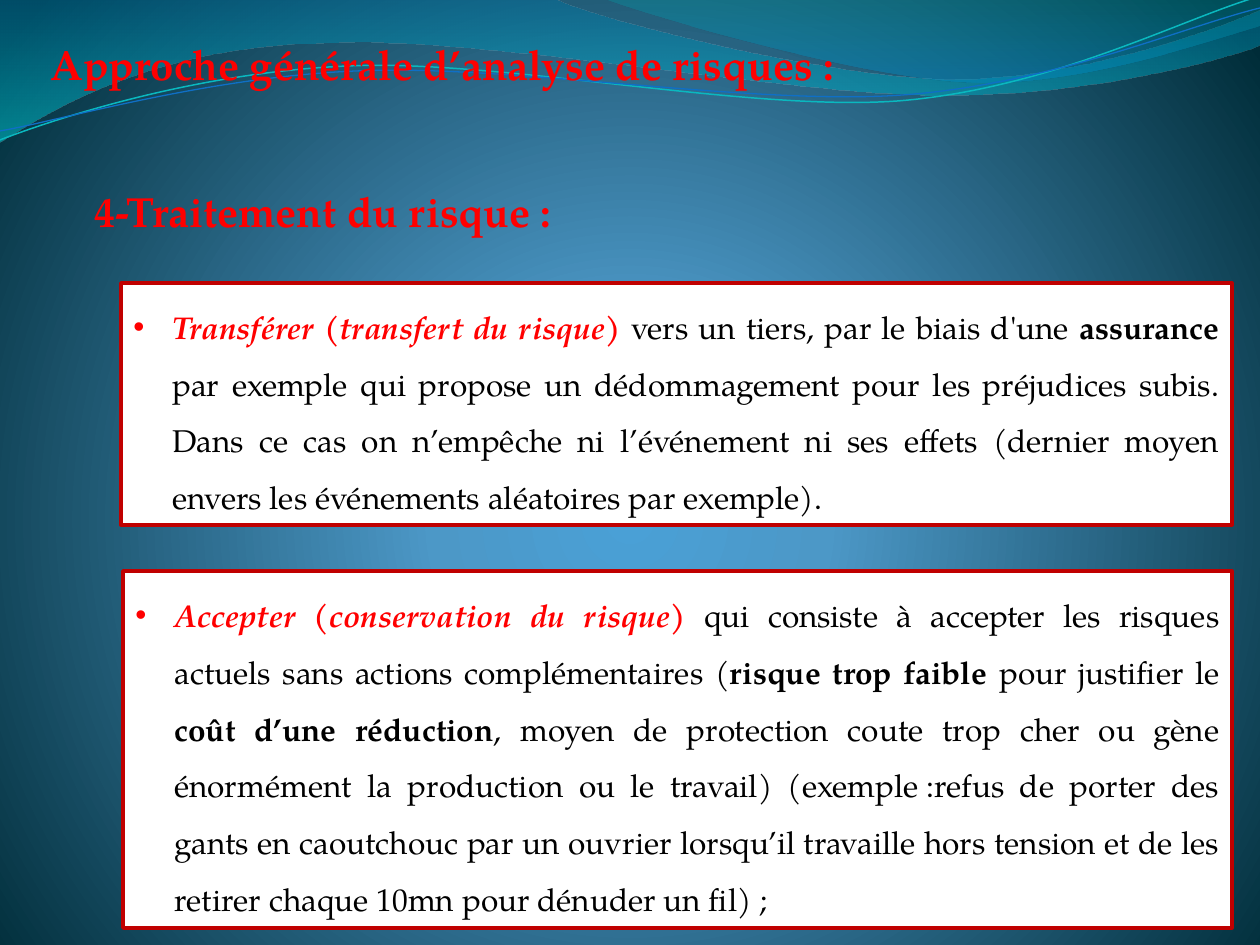
"""Build a slide on risk treatment: two framed definitions under a wavy header."""
import math

import pptx
import pptx.dml.color
import pptx.enum.shapes
import pptx.enum.text
import pptx.oxml
import pptx.oxml.ns
import pptx.util

SCALE = 914400 / 126
FONT = "TeX Gyre Pagella"
RED, BLACK, WHITE, FRAME = "FF0000", "000000", "FFFFFF", "C00000"
INDENT = 39
TILT = -2.7
HARD_SPACE = chr(160)

BACKDROP = [(0, "4AA0D6", 100), (25, "4C98C7", 100), (100, "002C38", 100)]
CENTRE = '<a:path path="circle"><a:fillToRect l="10000" t="110000" r="10000" b="100000"/></a:path>'
DOWNWARD = '<a:lin ang="5400000" scaled="0"/>'

BANDS = [
    ((-1, -1, 1262, 143),
     [(0, 0), (554, -1), (600, 21, 837, 79, 955, 79), (1075, 79, 1207, 33, 1260, 11),
      (1261, 45), (1239, 55, 1096, 96, 940, 95), (784, 95, 481, 35, 324, 43),
      (163, 45, 58, 105, -1, 142), (0, 0)],
     [(0, "0074A1", 45), (100, "00C6CF", 55)]),
    ((604, -1, 656, 88),
     [(604, -1), (641, 14, 859, 78, 969, 82), (1079, 87, 1211, 40, 1260, 26), (1260, 0),
      (604, -1)],
     [(0, "00A1A9", 30), (80, "008BBF", 45)]),
]
STRANDS = [
    ((-3, 28, 1263, 89),
     [(0, 140), (60, 117, 199, 72, 349, 66), (498, 59, 747, 112, 898, 101),
      (1050, 89, 1182, 19, 1257, -3)], "0AB8BF", 0.85),
    ((-3, 38, 1264, 73),
     [(0, 131), (59, 121, 207, 77, 357, 71), (508, 64, 752, 106, 903, 95),
      (1053, 84, 1186, 26, 1260, 8)], "0F6FC6", 0.75),
]

HEADINGS = [
    ((82, 179, 658, 63), f"4-Traitement du risque{HARD_SPACE}:"),
    ((38, 32, 1016, 63), "Approche générale d’analyse de risques :"),
]
KEY = {"bold": True, "italic": True}
STRONG = {"bold": True, "italic": False}
PLAIN = {"bold": False, "italic": False}
DEFINITIONS = [
    ((121, 283, 1111, 242), [
        ("Transférer (transfert du risque) ", RED, KEY),
        ("vers un tiers, par le biais d'une ", BLACK, PLAIN),
        ("assurance", BLACK, STRONG),
        (" par exemple qui propose un dédommagement pour les préjudices subis. Dans ce cas "
         "on n’empêche ni l’événement ni ses effets (dernier moyen envers les événements "
         "aléatoires par exemple).", BLACK, PLAIN),
    ]),
    ((123, 571, 1109, 357), [
        ("Accepter (conservation du risque) ", RED, KEY),
        ("qui consiste à accepter les risques actuels sans actions complémentaires (", BLACK, PLAIN),
        ("risque trop faible ", BLACK, STRONG),
        ("pour justifier le ", BLACK, PLAIN),
        ("coût d’une réduction", BLACK, STRONG),
        (", moyen de protection coute trop cher ou gène énormément la production ou le travail) "
         f"(exemple{HARD_SPACE}:refus de porter des gants en caoutchouc par un ouvrier lorsqu’il "
         "travaille hors tension et de les retirer chaque 10mn pour dénuder un fil) ;",
         BLACK, PLAIN),
    ]),
]


def px(value):
    return pptx.util.Emu(round(value * SCALE))


def rgb(code):
    return pptx.dml.color.RGBColor.from_string(code)


def assign(target, values):
    for name, value in values.items():
        setattr(target, name, value)


def xml(tag, attributes="", inner=""):
    names = pptx.oxml.ns.nsdecls("a")
    return pptx.oxml.parse_xml(f"<a:{tag} {names} {attributes}>{inner}</a:{tag}>")


def find(owner, tag):
    return owner.element.find(".//" + pptx.oxml.ns.qn(f"a:{tag}"))


def paint_gradient(owner, fill, stops, direction):
    fill.gradient()
    old = find(owner, "gradFill")
    inner = "".join(
        f'<a:gs pos="{place * 1000}"><a:srgbClr val="{code}">'
        f'<a:alpha val="{opacity * 1000}"/></a:srgbClr></a:gs>'
        for place, code, opacity in stops)
    new = xml("gradFill", 'rotWithShape="1"', f"<a:gsLst>{inner}</a:gsLst>{direction}")
    old.getparent().replace(old, new)


def local_point(x, y, frame, tilt):
    left, top, width, height = frame
    dx, dy = x - left - width / 2, y - top - height / 2
    sine, cosine = math.sin(math.radians(-tilt)), math.cos(math.radians(-tilt))
    return (px(dx * cosine - dy * sine + width / 2),
            px(dx * sine + dy * cosine + height / 2))


def add_curve(page, frame, outline, closed, tilt=0):
    ends = [(px(part[-2]), px(part[-1])) for part in outline]
    builder = page.shapes.build_freeform(*ends[0])
    builder.add_line_segments(ends[1:], close=closed)
    shape = builder.convert_to_shape()
    shape.shadow.inherit = False
    left, top, width, height = map(px, frame)
    assign(shape, {"left": left, "top": top, "width": width, "height": height,
                   "rotation": tilt})
    steps = []
    for index, part in enumerate(outline):
        tag = "moveTo" if index == 0 else "lnTo" if len(part) == 2 else "cubicBezTo"
        points = (local_point(x, y, frame, tilt) for x, y in zip(part[::2], part[1::2]))
        inner = "".join(f'<a:pt x="{x}" y="{y}"/>' for x, y in points)
        steps.append(f"<a:{tag}>{inner}</a:{tag}>")
    if closed:
        steps.append("<a:close/>")
    old = find(shape, "path")
    new = xml("path", f'w="{width}" h="{height}"', "".join(steps))
    old.getparent().replace(old, new)
    return shape


def draw_line(shape, code, width):
    shape.line.color.rgb = rgb(code)
    shape.line.width = pptx.util.Pt(width)


def add_span(para, text, code, size, style):
    span = para.add_run()
    span.text = text
    span.font.color.rgb = rgb(code)
    assign(span.font, {"name": FONT, "size": pptx.util.Pt(size), **style})


def add_waves(page):
    for frame, outline, stops in BANDS:
        band = add_curve(page, frame, outline, True)
        paint_gradient(band, band.fill, stops, DOWNWARD)
        band.line.fill.background()
    for frame, outline, code, width in STRANDS:
        strand = add_curve(page, frame, outline, False, TILT)
        strand.fill.background()
        draw_line(strand, code, width)


def add_definition(page, place, spans):
    box = page.shapes.add_shape(pptx.enum.shapes.MSO_SHAPE.RECTANGLE, *map(px, place))
    box.shadow.inherit = False
    box.fill.solid()
    box.fill.fore_color.rgb = rgb(WHITE)
    draw_line(box, FRAME, 2)
    assign(box.text_frame, {"word_wrap": True,
                            "vertical_anchor": pptx.enum.text.MSO_ANCHOR.TOP,
                            "auto_size": pptx.enum.text.MSO_AUTO_SIZE.SHAPE_TO_FIT_TEXT})
    para = box.text_frame.paragraphs[0]
    assign(para, {"alignment": pptx.enum.text.PP_ALIGN.JUSTIFY, "line_spacing": 1.5})
    layout = para._p.get_or_add_pPr()
    layout.set("marL", str(px(INDENT)))
    layout.set("indent", str(px(-INDENT)))
    layout.append(xml("buFont", 'typeface="Arial"'))
    layout.append(xml("buChar", 'char="•"'))
    for text, code, style in spans:
        add_span(para, text, code, 18, style)


def add_heading(page, place, text):
    box = page.shapes.add_textbox(*map(px, place))
    assign(box.text_frame, {"word_wrap": True,
                            "auto_size": pptx.enum.text.MSO_AUTO_SIZE.SHAPE_TO_FIT_TEXT})
    add_span(box.text_frame.paragraphs[0], text, RED, 24, {"bold": True})


def main():
    deck = pptx.Presentation()
    assign(deck, {"slide_width": px(1260), "slide_height": px(945)})
    page = deck.slides.add_slide(deck.slide_layouts[6])
    paint_gradient(page, page.background.fill, BACKDROP, CENTRE)
    add_waves(page)
    for place, spans in DEFINITIONS:
        add_definition(page, place, spans)
    for place, text in HEADINGS:
        add_heading(page, place, text)
    deck.save("out.pptx")


if __name__ == "__main__":
    main()
